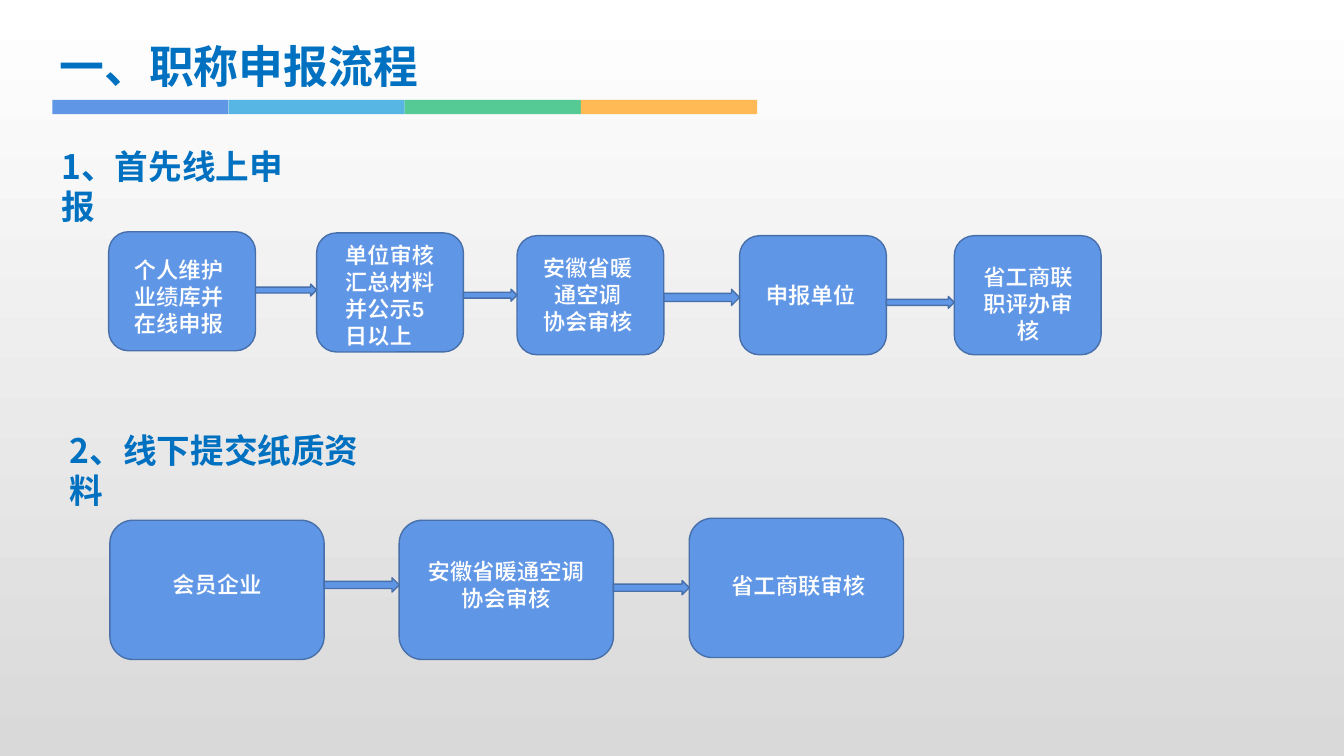
from dataclasses import dataclass

import pptx
import pptx.dml.color
import pptx.enum.shapes
import pptx.enum.text
import pptx.oxml
import pptx.oxml.ns
import pptx.util

Cm = pptx.util.Cm
Pt = pptx.util.Pt
SHAPE = pptx.enum.shapes.MSO_SHAPE
ALIGN = pptx.enum.text.PP_ALIGN


@dataclass(frozen=True)
class Theme:
    blue: str = "6096E6"
    outline: str = "476FAA"
    heading: str = "0070C0"
    white: str = "FFFFFF"
    back: tuple = ("FFFFFF", "D9D9D9")
    bar: tuple = ("6096E6", "58B6E5", "56CA95", "FFBA55")
    latin: str = "Arial"
    cjk: str = "Noto Sans CJK SC"
    title_size: int = 32
    heading_size: int = 24
    label_size: int = 16


THEME = Theme()


def rgb(value):
    return pptx.dml.color.RGBColor.from_string(value)


def add_background(s):
    fill = s.background.fill
    fill.gradient()
    fill.gradient_angle = 270
    for stop, position, color in zip(fill.gradient_stops, (0, 1), THEME.back):
        stop.position = position
        stop.color.rgb = rgb(color)


def add_block(shapes, kind, box, fill, line=None):
    sp = shapes.add_shape(kind, *map(Cm, box))
    sp.shadow.inherit = False
    sp.fill.solid()
    sp.fill.fore_color.rgb = rgb(fill)
    if line:
        sp.line.color.rgb = rgb(line)
        sp.line.width = Pt(1)
    else:
        sp.line.fill.background()
    return sp


def style_paragraph(p, size, color, latin, edge=None):
    """Bold text in one Latin and one CJK font, with an optional glyph outline."""
    p.font.size = Pt(size)
    p.font.bold = True
    p.font.color.rgb = rgb(color)
    p.font.name = latin
    qn = pptx.oxml.ns.qn
    props = p._p.pPr.find(qn("a:defRPr"))
    ns = pptx.oxml.ns.nsdecls("a")
    props.find(qn("a:latin")).addnext(
        pptx.oxml.parse_xml(f'<a:ea {ns} typeface="{THEME.cjk}"/>'))
    if edge:
        props.insert(0, pptx.oxml.parse_xml(
            f'<a:ln {ns} w="9525"><a:solidFill><a:srgbClr val="{edge}"/>'
            "</a:solidFill></a:ln>"))


def add_heading(s, box, text, size):
    tf = s.shapes.add_textbox(*map(Cm, box)).text_frame
    tf.word_wrap = True
    tf.margin_left = tf.margin_right = tf.margin_top = tf.margin_bottom = Cm(0.18)
    tf.text = text
    style_paragraph(tf.paragraphs[0], size, THEME.heading, THEME.cjk)


def add_label(s, box, text, align):
    sp = s.shapes.add_textbox(*map(Cm, box))
    sp.fill.solid()
    sp.fill.fore_color.rgb = rgb(THEME.blue)
    tf = sp.text_frame
    tf.word_wrap = True
    tf.text = text
    for p in tf.paragraphs:
        p.alignment = align
        style_paragraph(p, THEME.label_size, THEME.white, THEME.latin, THEME.blue)


def add_title(s, left, top):
    add_heading(s, (left, top, 9.7, 1.7), "一、职称申报流程", THEME.title_size)
    bar = s.shapes.add_group_shape()
    width = 4.44
    for i, color in enumerate(THEME.bar):
        add_block(bar.shapes, SHAPE.RECTANGLE,
                  (left + i * width, top + 1.73, width, 0.36), color)


def add_flow(s, left, top, size, steps, arrows):
    """Steps are (x, y, label box, text, alignment); arrows are (y, height)."""
    width, height = size
    for x, y, (dx, dy, w, h), text, align in steps:
        add_block(s.shapes, SHAPE.ROUNDED_RECTANGLE,
                  (left + x, top + y, width, height), THEME.blue, THEME.outline)
        add_label(s, (left + x + dx, top + y + dy, w, h), text, align)
    for step, following, (y, h) in zip(steps, steps[1:], arrows):
        start = step[0] + width
        add_block(s.shapes, SHAPE.RIGHT_ARROW,
                  (left + start, top + y, following[0] - start, h),
                  THEME.blue, THEME.outline)


ONLINE_STEPS = [
    (0, 0, (0.38, 0.48, 2.95, 1.37), "个人维护业绩库并在线申报", ALIGN.LEFT),
    (5.24, 0.03, (0.46, 0.08, 2.95, 1.96), "单位审核汇总材料并公示5日以上", ALIGN.LEFT),
    (10.29, 0.1, (0.3, 0.33, 2.95, 1.96), "安徽省暖通空调\n协会审核", ALIGN.CENTER),
    (15.9, 0.1, (0.41, 1.02, 2.95, 1.3), "申报单位", ALIGN.LEFT),
    (21.31, 0.1, (0.38, 0.56, 2.95, 1.37), "省工商联\v职评办审核", ALIGN.CENTER),
]
ONLINE_ARROWS = [(1.32, 0.3), (1.45, 0.3), (1.45, 0.41), (1.63, 0.3)]

PAPER_STEPS = [
    (0, 0.05, (1.32, 1.14, 3.05, 0.94), "会员企业", ALIGN.LEFT),
    (7.29, 0.05, (0.36, 0.81, 4.65, 1.63), "安徽省暖通空调协会审核", ALIGN.CENTER),
    (14.6, 0, (0.61, 1.22, 4.27, 0.94), "省工商联审核", ALIGN.CENTER),
]
PAPER_ARROWS = [(1.5, 0.36), (1.57, 0.36)]


def main():
    prs = pptx.Presentation()
    prs.slide_width, prs.slide_height = Cm(33.87), Cm(19.05)
    s = prs.slides.add_slide(prs.slide_layouts[6])
    add_background(s)
    add_title(s, 1.32, 0.79)
    add_heading(s, (1.37, 3.49, 6.71, 1.37), "1、首先线上申报", THEME.heading_size)
    add_flow(s, 2.74, 5.84, (3.7, 3), ONLINE_STEPS, ONLINE_ARROWS)
    add_heading(s, (1.58, 10.65, 8.41, 1.37), "2、线下提交纸质资料", THEME.heading_size)
    add_flow(s, 2.77, 13.06, (5.4, 3.51), PAPER_STEPS, PAPER_ARROWS)
    prs.save("out.pptx")


if __name__ == "__main__":
    main()
